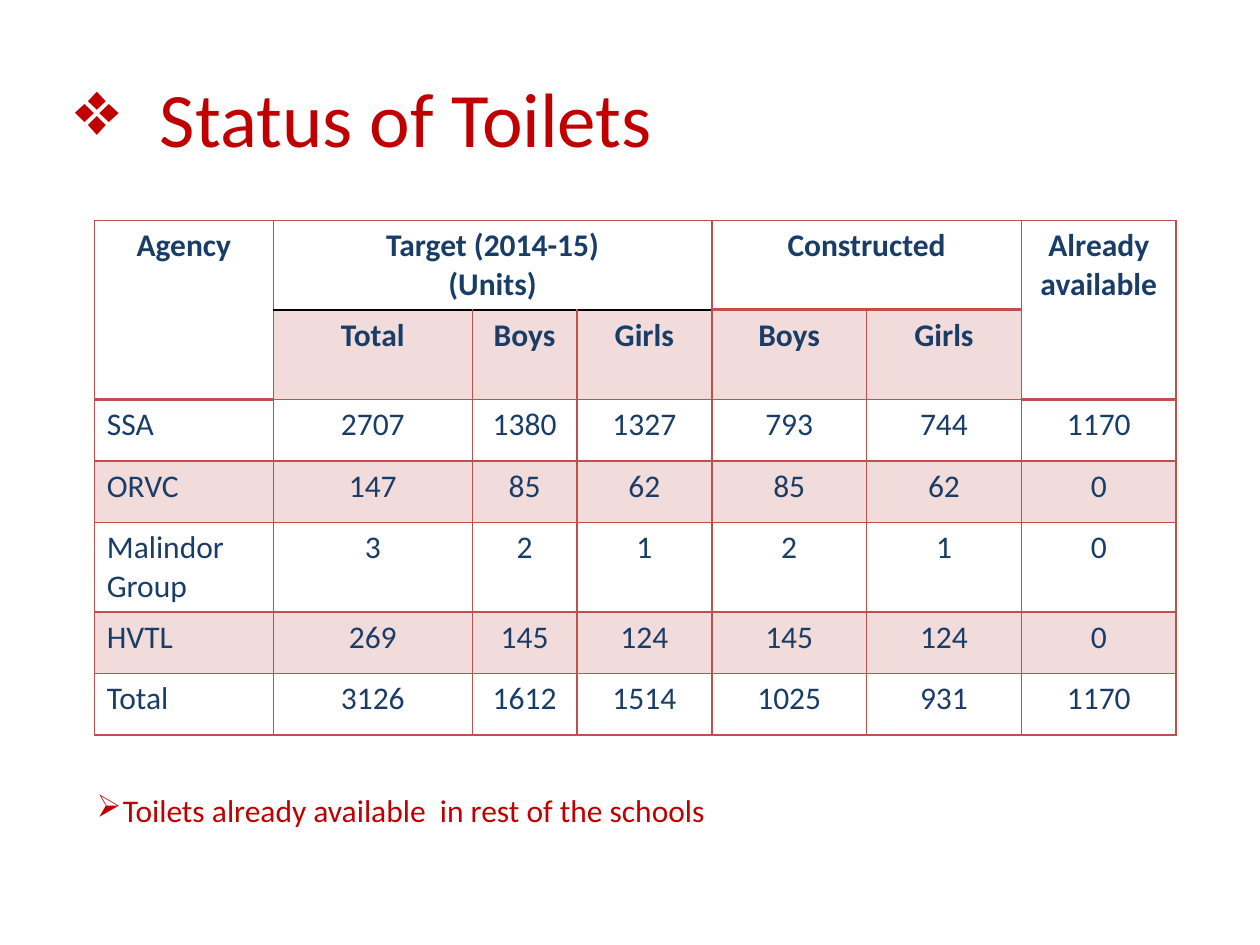
from dataclasses import dataclass

from lxml.etree import SubElement
from pptx import Presentation
from pptx.dml.color import RGBColor
from pptx.enum.text import MSO_ANCHOR, PP_ALIGN
from pptx.oxml.ns import qn
from pptx.slide import Slide
from pptx.table import Table, _Cell
from pptx.text.text import TextFrame, _Paragraph
from pptx.util import Cm, Length, Pt

RED = RGBColor(0xC0, 0x00, 0x00)
NAVY = RGBColor(0x1A, 0x3D, 0x68)
BRICK = RGBColor(0xC0, 0x50, 0x4D)
BLACK = RGBColor(0x00, 0x00, 0x00)
FONT = "Calibri"
TINT_PERCENT = 20


@dataclass(frozen=True)
class Heading:
    row: int
    column: int
    lines: tuple[str, ...]
    rows: int = 1
    columns: int = 1


@dataclass(frozen=True)
class AgencyStatus:
    agency: str
    counts: tuple[int, ...]
    tinted: bool = False
    height: Length = Cm(1.24)


@dataclass(frozen=True)
class Edge:
    color: RGBColor = BRICK
    points: int = 1


HEADER_HEIGHT = Cm(1.8)
HEADER_ROWS = 2
COLUMN_WIDTHS = [Cm(w) for w in (3.61, 4.01, 2.11, 2.72, 3.12, 3.12, 3.12)]
HEADINGS = [
    Heading(0, 0, ("Agency",), rows=2),
    Heading(0, 1, ("Target (2014-15)", "(Units)"), columns=3),
    Heading(0, 4, ("Constructed",), columns=2),
    Heading(0, 6, ("Already available",), rows=2),
    *(Heading(1, column, (label,)) for column, label in
      enumerate(("Total", "Boys", "Girls", "Boys", "Girls"), start=1)),
]
STATUSES = [
    AgencyStatus("SSA", (2707, 1380, 1327, 793, 744, 1170)),
    AgencyStatus("ORVC", (147, 85, 62, 85, 62, 0), tinted=True),
    AgencyStatus("Malindor Group", (3, 2, 1, 2, 1, 0), height=HEADER_HEIGHT),
    AgencyStatus("HVTL", (269, 145, 124, 145, 124, 0), tinted=True),
    AgencyStatus("Total", (3126, 1612, 1514, 1025, 931, 1170)),
]


def add_text(paragraph: _Paragraph, text: str, size: int, color: RGBColor,
             bold: bool = False) -> None:
    run = paragraph.add_run()
    run.text = text
    run.font.name = FONT
    run.font.size = Pt(size)
    run.font.bold = bold
    run.font.color.rgb = color


def add_bullet(paragraph: _Paragraph, symbol: str, indent: Length) -> None:
    paragraph.alignment = PP_ALIGN.LEFT
    properties = paragraph._p.get_or_add_pPr()
    properties.set("marL", str(int(indent)))
    properties.set("indent", str(-int(indent)))
    SubElement(properties, qn("a:buChar"), char=symbol)


def horizontal_edge(boundary: int, column: int) -> Edge:
    """Rule above table row `boundary`: headings have their own underlines."""
    if boundary == 1 and 1 <= column <= 3:
        return Edge(BLACK)
    if (boundary == 1 and column in (4, 5)) or (boundary == 2 and column in (0, 6)):
        return Edge(points=2)
    return Edge()


def draw_edges(cell: _Cell, row: int, column: int) -> None:
    properties = cell._tc.get_or_add_tcPr()
    edges = {
        "a:lnL": Edge(),
        "a:lnR": Edge(),
        "a:lnT": horizontal_edge(row, column),
        "a:lnB": horizontal_edge(row + cell.span_height, column),
    }
    for tag, edge in edges.items():
        line = SubElement(properties, qn(tag), w=str(int(Pt(edge.points))))
        fill = SubElement(line, qn("a:solidFill"))
        SubElement(fill, qn("a:srgbClr"), val=str(edge.color))


def fill_cell(cell: _Cell, tinted: bool) -> None:
    if not tinted:
        cell.fill.background()
        return
    cell.fill.solid()
    cell.fill.fore_color.rgb = BRICK
    color = cell._tc.tcPr.find(qn("a:solidFill")).find(qn("a:srgbClr"))
    SubElement(color, qn("a:alpha"), val=str(TINT_PERCENT * 1000))


def write_cell(cell: _Cell, lines: tuple[str, ...], bold: bool, centred: bool) -> None:
    frame = cell.text_frame
    for index, text in enumerate(lines):
        paragraph = frame.add_paragraph() if index else frame.paragraphs[0]
        paragraph.alignment = PP_ALIGN.CENTER if centred else PP_ALIGN.LEFT
        add_text(paragraph, text, 18, NAVY, bold)


def add_status_table(slide: Slide) -> None:
    heights = [HEADER_HEIGHT] * HEADER_ROWS + [status.height for status in STATUSES]
    table: Table = slide.shapes.add_table(
        len(heights), len(COLUMN_WIDTHS), Cm(1.9), Cm(4.44),
        sum(COLUMN_WIDTHS), sum(heights)).table
    table.first_row = table.horz_banding = False
    for table_column, width in zip(table.columns, COLUMN_WIDTHS):
        table_column.width = width
    for table_row, height in zip(table.rows, heights):
        table_row.height = height

    for heading in HEADINGS:
        cell = table.cell(heading.row, heading.column)
        if heading.rows > 1 or heading.columns > 1:
            cell.merge(table.cell(heading.row + heading.rows - 1,
                                  heading.column + heading.columns - 1))
        write_cell(cell, heading.lines, bold=True, centred=True)
    for row, status in enumerate(STATUSES, start=HEADER_ROWS):
        for column, value in enumerate((status.agency, *status.counts)):
            write_cell(table.cell(row, column), (str(value),),
                       bold=False, centred=column > 0)

    tinted_rows = {1} | {row for row, status in enumerate(STATUSES, start=HEADER_ROWS)
                         if status.tinted}
    for row in range(len(heights)):
        for column in range(len(COLUMN_WIDTHS)):
            cell = table.cell(row, column)
            if not cell.is_spanned:
                draw_edges(cell, row, column)
                fill_cell(cell, row in tinted_rows)


def add_title(slide: Slide) -> None:
    title = slide.shapes.title
    title.left, title.top, title.width, title.height = Cm(1.27), Cm(0.76), Cm(22.86), Cm(3.18)
    title.text_frame.vertical_anchor = MSO_ANCHOR.MIDDLE
    heading = title.text_frame.paragraphs[0]
    add_bullet(heading, "❖", Cm(1.7))
    add_text(heading, "Status of Toilets", 44, RED)


def add_footnote(slide: Slide) -> None:
    frame: TextFrame = slide.shapes.add_textbox(
        Cm(1.7), Cm(15.04), Cm(20.75), Cm(1.8)).text_frame
    frame.word_wrap = True
    frame.vertical_anchor = MSO_ANCHOR.BOTTOM
    remark = frame.paragraphs[0]
    add_bullet(remark, "➢", Cm(0.53))
    add_text(remark, "Toilets already available  in rest of the schools", 18, RED)


def main() -> None:
    presentation = Presentation()
    presentation.slide_width, presentation.slide_height = Cm(25.4), Cm(19.05)
    slide = presentation.slides.add_slide(presentation.slide_layouts.get_by_name("Title Only"))
    add_title(slide)
    add_status_table(slide)
    add_footnote(slide)
    presentation.save("out.pptx")


if __name__ == "__main__":
    main()
